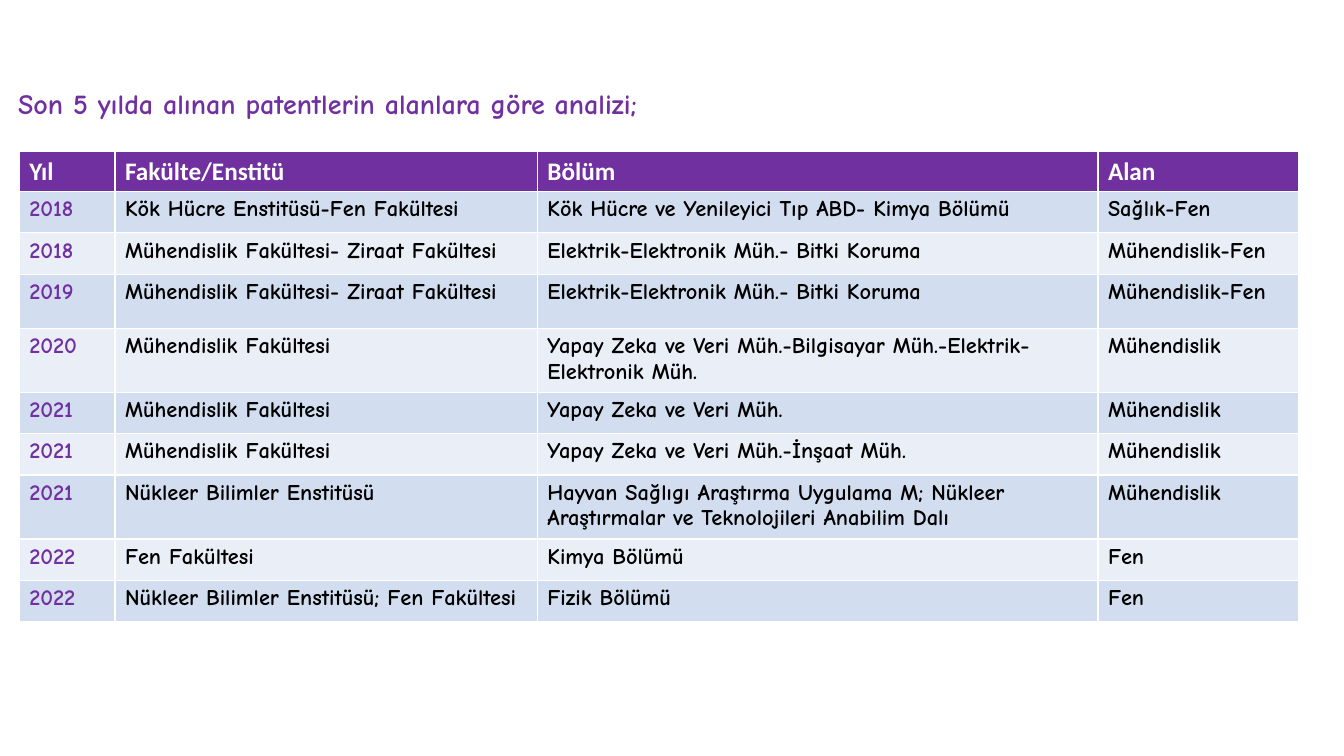
from pptx import Presentation
from pptx.dml.color import RGBColor
from pptx.enum.text import MSO_ANCHOR as Anchor, MSO_AUTO_SIZE as AutoSize, PP_ALIGN as Align
from pptx.util import Inches, Pt

PURPLE, WHITE, BLACK = "7030A0", "FFFFFF", "000000"
BANDS = ("D2DEEF", "EAEFF7")
HAND_FONT = "Comic Neue"

COLUMN_WIDTHS = (0.95, 4.19, 5.56, 1.99)
HEADER_HEIGHT, ROW_HEIGHT = 0.4, 0.41
TALL_ROWS = {3: 0.54, 4: 0.63, 7: 0.63}

HEADINGS = ("Yıl", "Fakülte/Enstitü", "Bölüm", "Alan")
PATENTS = (
    ("2018", "Kök Hücre Enstitüsü-Fen Fakültesi",
     "Kök Hücre ve Yenileyici Tıp ABD- Kimya Bölümü", "Sağlık-Fen"),
    ("2018", "Mühendislik Fakültesi- Ziraat Fakültesi",
     "Elektrik-Elektronik Müh.- Bitki Koruma", "Mühendislik-Fen"),
    ("2019", "Mühendislik Fakültesi- Ziraat Fakültesi",
     "Elektrik-Elektronik Müh.- Bitki Koruma", "Mühendislik-Fen"),
    ("2020", "Mühendislik Fakültesi",
     "Yapay Zeka ve Veri Müh.-Bilgisayar Müh.-Elektrik-Elektronik Müh.", "Mühendislik"),
    ("2021", "Mühendislik Fakültesi", "Yapay Zeka ve Veri Müh.", "Mühendislik"),
    ("2021", "Mühendislik Fakültesi", "Yapay Zeka ve Veri Müh.-İnşaat Müh.", "Mühendislik"),
    ("2021", "Nükleer Bilimler Enstitüsü",
     "Hayvan Sağlıgı Araştırma Uygulama M; Nükleer Araştırmalar ve Teknolojileri Anabilim Dalı",
     "Mühendislik"),
    ("2022", "Fen Fakültesi", "Kimya Bölümü", "Fen"),
    ("2022", "Nükleer Bilimler Enstitüsü; Fen Fakültesi", "Fizik Bölümü", "Fen"),
)


def paint(color_format, color):
    color_format.rgb = RGBColor.from_string(color)


def write(frame, text, *, size, color, font=HAND_FONT, bold=True):
    para = frame.paragraphs[0]
    para.alignment = Align.LEFT
    span = para.add_run()
    span.text = text
    span.font.name = font
    span.font.size = Pt(size)
    span.font.bold = bold
    paint(span.font.color, color)


def fill_row(table, index, texts, fill, formats):
    """Write one row, with a text format for each of its cells."""
    for column, (text, text_format) in enumerate(zip(texts, formats)):
        cell = table.cell(index, column)
        cell.fill.solid()
        paint(cell.fill.fore_color, fill)
        write(cell.text_frame, text, **text_format)


def add_title(page, text):
    title = page.shapes.title
    title.left, title.top = Inches(0.08), Inches(0.81)
    title.width, title.height = Inches(7.18), Inches(0.44)
    frame = title.text_frame
    frame.word_wrap = False
    frame.auto_size = AutoSize.SHAPE_TO_FIT_TEXT
    frame.vertical_anchor = Anchor.TOP
    write(frame, text, size=20, color=PURPLE)


def add_patent_table(page):
    heights = [HEADER_HEIGHT] + [TALL_ROWS.get(index, ROW_HEIGHT)
                                 for index in range(1, len(PATENTS) + 1)]
    table = page.shapes.add_table(
        len(heights), len(COLUMN_WIDTHS), Inches(0.19), Inches(1.5),
        Inches(sum(COLUMN_WIDTHS)), Inches(sum(heights))).table
    for column, width in zip(table.columns, COLUMN_WIDTHS):
        column.width = Inches(width)
    for row, height in zip(table.rows, heights):
        row.height = Inches(height)

    heading = {"size": 18, "color": WHITE, "font": "Calibri"}
    fill_row(table, 0, HEADINGS, PURPLE, [heading] * len(HEADINGS))
    year, detail = ({"size": 16, "color": color} for color in (PURPLE, BLACK))
    for index, patent in enumerate(PATENTS, start=1):
        fill_row(table, index, patent, BANDS[(index - 1) % 2], [year] + [detail] * 3)


def main():
    deck = Presentation()
    deck.slide_width, deck.slide_height = Inches(13.33), Inches(7.5)
    page = deck.slides.add_slide(deck.slide_layouts.get_by_name("Title Only"))
    add_title(page, "Son 5 yılda alınan patentlerin alanlara göre analizi;")
    add_patent_table(page)
    deck.save("out.pptx")


if __name__ == "__main__":
    main()
